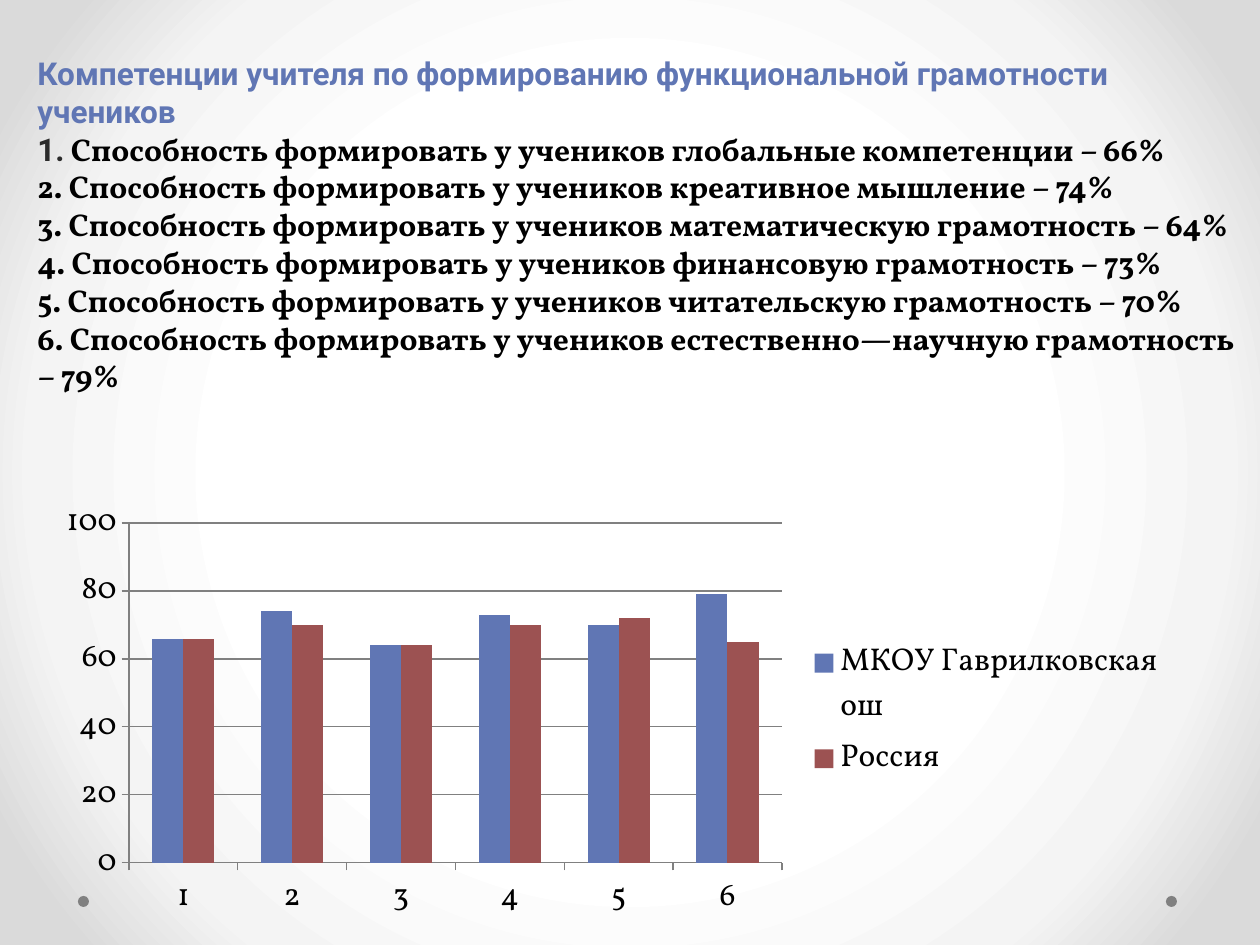
from lxml.etree import SubElement
from pptx import Presentation
from pptx.chart.data import CategoryChartData
from pptx.dml.color import RGBColor
from pptx.enum.chart import XL_CHART_TYPE as ChartType
from pptx.enum.chart import XL_LEGEND_POSITION as LegendPosition
from pptx.enum.chart import XL_TICK_MARK as TickMark
from pptx.enum.shapes import MSO_SHAPE as ShapeType
from pptx.oxml import parse_xml
from pptx.oxml.ns import nsdecls, qn
from pptx.util import Pt

PX = 914400 // 126
BLUE = RGBColor(0x60, 0x76, 0xB4)
RED = RGBColor(0x9C, 0x52, 0x52)
GRAY = RGBColor(0x80, 0x80, 0x80)
DARK = RGBColor(0x2B, 0x2B, 0x2B)
BLACK = RGBColor(0, 0, 0)
HEADING_FONT, BODY_FONT = "Roboto", "Vollkorn"

TITLE = "Компетенции учителя по\u00a0формированию функциональной грамотности учеников"
SKILLS = [
    ("глобальные компетенции", 66),
    ("креативное мышление", 74),
    ("математическую грамотность", 64),
    ("финансовую грамотность", 73),
    ("читательскую грамотность", 70),
    ("естественно—научную грамотность", 79),
]
SERIES = [
    ("МКОУ Гаврилковская ош", [score for _, score in SKILLS], BLUE),
    ("Россия", [66, 70, 64, 70, 72, 65], RED),
]
BACKGROUND_STOPS = [(50, "FFFFFF"), (76, "F4F4F4"), (92, "DADADA")]
DOT_LEFTS, DOT_TOP, DOT_SIZE = (1166, 78), 896, 11
TEXT_BOX = (25, 45, 1235, 432)
CHART_BOX = (44, 493, 1134, 436)
PLOT_BOX = (129, 523, 653, 340)


def scaled(box):
    return [length * PX for length in box]


def set_background(slide):
    """Fill the background with a gradient that spreads from the centre."""
    stops = "".join(
        f'<a:gs pos="{position * 1000}"><a:srgbClr val="{color}"/></a:gs>'
        for position, color in BACKGROUND_STOPS
    )
    slide.background.fill.solid()
    properties = slide.background._cSld.bg.bgPr
    properties.replace(properties[0], parse_xml(
        f'<a:gradFill {nsdecls("a")} rotWithShape="1"><a:gsLst>{stops}</a:gsLst>'
        '<a:path path="circle"><a:fillToRect l="50000" t="50000" r="50000" b="50000"/>'
        '</a:path></a:gradFill>'
    ))


def add_dot(slide, left):
    dot = slide.shapes.add_shape(
        ShapeType.OVAL, *scaled((left, DOT_TOP, DOT_SIZE, DOT_SIZE)))
    dot.shadow.inherit = False
    dot.fill.solid()
    dot.fill.fore_color.rgb = GRAY
    dot.line.fill.background()


def add_text(paragraph, text, *, font=BODY_FONT, color=BLACK, size=18, bold=True):
    run = paragraph.add_run()
    run.text = text
    run.font.name = font
    run.font.size = Pt(size)
    run.font.bold = bold
    run.font.color.rgb = color


def add_skill_list(slide):
    frame = slide.shapes.add_textbox(*scaled(TEXT_BOX)).text_frame
    frame.word_wrap = True
    frame.margin_top = 9 * PX
    add_text(frame.paragraphs[0], TITLE, font=HEADING_FONT, color=BLUE)
    for number, (skill, score) in enumerate(SKILLS, start=1):
        paragraph = frame.add_paragraph()
        first = number == 1
        add_text(paragraph, f"{number}.",
                 font=HEADING_FONT if first else BODY_FONT,
                 color=DARK if first else BLACK)
        add_text(paragraph, f" Способность формировать у учеников {skill} – {score}%")
    for paragraph in frame.paragraphs:
        paragraph.line_spacing = Pt(21.6)


def place_plot(chart):
    """Fix the inner plot area at PLOT_BOX as fractions of the chart."""
    left, top, width, height = CHART_BOX
    plot_left, plot_top, plot_width, plot_height = PLOT_BOX
    plot_area = chart._chartSpace.chart.plotArea
    for old in plot_area.findall(qn("c:layout")):
        plot_area.remove(old)
    layout = parse_xml(f'<c:layout {nsdecls("c")}/>')
    plot_area.insert(0, layout)
    manual = SubElement(layout, qn("c:manualLayout"))
    for tag, value in (
        ("layoutTarget", "inner"), ("xMode", "edge"), ("yMode", "edge"),
        ("x", (plot_left - left) / width), ("y", (plot_top - top) / height),
        ("w", plot_width / width), ("h", plot_height / height),
    ):
        text = value if isinstance(value, str) else f"{value:.4f}"
        SubElement(manual, qn(f"c:{tag}")).set("val", text)


def add_score_chart(slide):
    data = CategoryChartData()
    data.categories = [str(number) for number in range(1, len(SKILLS) + 1)]
    for name, values, _ in SERIES:
        data.add_series(name, values)
    chart = slide.shapes.add_chart(
        ChartType.COLUMN_CLUSTERED, *scaled(CHART_BOX), data).chart
    chart.has_title = False
    chart.font.name = BODY_FONT
    chart.font.size = Pt(18)
    chart.font.color.rgb = BLACK
    chart.has_legend = True
    chart.legend.position = LegendPosition.RIGHT
    chart.legend.include_in_layout = False

    plot = chart.plots[0]
    plot.gap_width = 150
    plot.overlap = 0
    plot.vary_by_categories = False
    for series, (_, _, color) in zip(plot.series, SERIES):
        series.format.fill.solid()
        series.format.fill.fore_color.rgb = color

    value_axis = chart.value_axis
    value_axis.minimum_scale, value_axis.maximum_scale = 0, 100
    value_axis.major_unit = 20
    value_axis.has_major_gridlines = True
    for axis in (chart.category_axis, value_axis):
        axis.major_tick_mark = TickMark.OUTSIDE
    for line in (chart.category_axis.format.line, value_axis.format.line,
                 value_axis.major_gridlines.format.line):
        line.color.rgb = GRAY
        line.width = Pt(0.75)
    place_plot(chart)


def main():
    presentation = Presentation()
    presentation.slide_width, presentation.slide_height = scaled((1260, 945))
    slide = presentation.slides.add_slide(presentation.slide_layouts[6])
    set_background(slide)
    for left in DOT_LEFTS:
        add_dot(slide, left)
    add_score_chart(slide)
    add_skill_list(slide)
    presentation.save("out.pptx")


if __name__ == "__main__":
    main()
